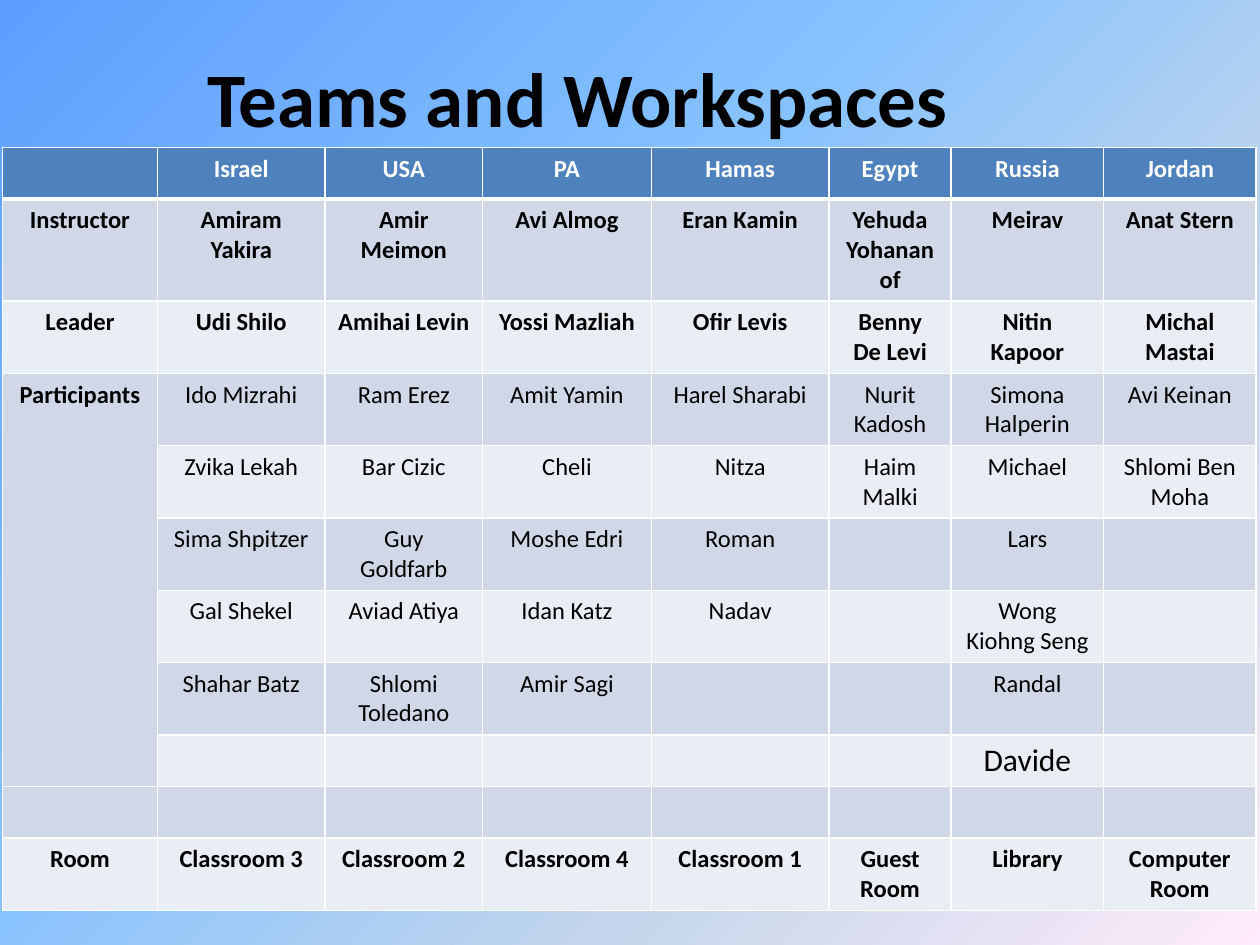
from dataclasses import dataclass

from lxml import etree
from pptx import Presentation, util as u
from pptx.dml.color import RGBColor
from pptx.enum import text
from pptx.oxml.ns import qn


@dataclass(frozen=True)
class Theme:
    """Colours, font and type sizes of the slide."""
    font: str = "Calibri"
    ink: str = "000000"
    white: str = "FFFFFF"
    header: str = "4F81BD"
    bands: tuple = ("D0D8E8", "E9EDF4")
    sky: tuple = ((0, "5E9EFF"), (40, "85C2FF"), (70, "C4D6EB"), (100, "FFEBFA"))
    title_size: int = 44
    cell_size: int = 14
    large_size: int = 18
    rule: int = 1
    header_rule: int = 3


THEME = Theme()
TITLE = "Teams and Workspaces "
SCHEDULE = [
    ["", "Israel", "USA", "PA", "Hamas", "Egypt", "Russia", "Jordan"],
    ["Instructor", "Amiram Yakira", "Amir Meimon", "Avi Almog", "Eran Kamin",
     "Yehuda Yohananof", "Meirav", "Anat Stern"],
    ["Leader", "Udi Shilo", "Amihai Levin", "Yossi Mazliah", "Ofir Levis",
     "Benny De Levi", "Nitin Kapoor", "Michal Mastai"],
    ["Participants", "Ido Mizrahi", "Ram Erez", "Amit Yamin", "Harel Sharabi",
     "Nurit Kadosh", "Simona Halperin", "Avi Keinan"],
    ["", "Zvika Lekah", "Bar Cizic", "Cheli", "Nitza", "Haim Malki", "Michael",
     "Shlomi Ben Moha"],
    ["", "Sima Shpitzer", "Guy Goldfarb", "Moshe Edri", "Roman", "", "Lars", ""],
    ["", "Gal Shekel", "Aviad Atiya", "Idan Katz", "Nadav", "", "Wong Kiohng Seng", ""],
    ["", "Shahar Batz", "Shlomi Toledano", "Amir Sagi", "", "", "Randal", ""],
    ["", "", "", "", "", "", "Davide", ""],
    [""] * 8,
    ["Room", "Classroom 3", "Classroom 2", "Classroom 4", "Classroom 1",
     "Guest Room", "Library", "Computer Room"],
]
COLUMNS = [1.23, 1.33, 1.25, 1.34, 1.41, 0.97, 1.21, 1.21]
ROW_HEIGHT = 0.41
PARTICIPANT_ROWS = range(3, 9)


def paint_background(slide):
    """Fill the slide with the diagonal sky gradient."""
    fill = slide.background.fill
    fill.gradient()
    gradient = slide.background._cSld.find(".//" + qn("a:gradFill"))
    stops = gradient.find(qn("a:gsLst"))
    for stop in list(stops):
        stops.remove(stop)
    for share, colour in THEME.sky:
        stop = etree.SubElement(stops, qn("a:gs"), pos=str(share * 1000))
        etree.SubElement(stop, qn("a:srgbClr"), val=colour)
    gradient.find(qn("a:lin")).set("ang", str(45 * 60000))


def write(frame, words, size, colour, bold):
    """Set one centred right-to-left paragraph in a text frame."""
    frame.text = words
    paragraph = frame.paragraphs[0]
    paragraph.alignment = text.PP_ALIGN.CENTER
    paragraph._p.get_or_add_pPr().set("rtl", "1")
    for run in paragraph.runs:
        run.font.name = THEME.font
        run.font.size = u.Pt(size)
        run.font.bold = bold
        run.font.color.rgb = RGBColor.from_string(colour)


def place_title(slide, box):
    """Place the heading in the title placeholder."""
    title = slide.shapes.title
    title.left, title.top, title.width, title.height = map(u.Inches, box)
    title.text_frame.vertical_anchor = text.MSO_ANCHOR.MIDDLE
    write(title.text_frame, TITLE, THEME.title_size, THEME.ink, True)


def rule_cell(cell, row):
    """Draw the white borders, heavier beneath the header row."""
    heavy = {(0, "B"), (1, "T")}
    for side in "LRTB":
        width = THEME.header_rule if (row, side) in heavy else THEME.rule
        line = etree.SubElement(cell._tc.get_or_add_tcPr(), qn("a:ln" + side),
                                w=str(u.Pt(width)))
        solid = etree.SubElement(line, qn("a:solidFill"))
        etree.SubElement(solid, qn("a:srgbClr"), val=THEME.white)


def place_schedule(slide, left, top):
    """Place the banded table of teams, people and rooms."""
    table = slide.shapes.add_table(
        len(SCHEDULE), len(COLUMNS), u.Inches(left), u.Inches(top),
        u.Inches(sum(COLUMNS)), u.Inches(ROW_HEIGHT * len(SCHEDULE))).table
    for column, width in zip(table.columns, COLUMNS):
        column.width = u.Inches(width)
    for row, names in enumerate(SCHEDULE):
        table.rows[row].height = u.Inches(ROW_HEIGHT)
        band = THEME.bands[(row - 1) % 2] if row else THEME.header
        for column, name in enumerate(names):
            cell = table.cell(row, column)
            rule_cell(cell, row)
            cell.fill.solid()
            cell.fill.fore_color.rgb = RGBColor.from_string(band)
            if name:
                size = THEME.large_size if name == "Davide" else THEME.cell_size
                write(cell.text_frame, name, size,
                      THEME.ink if row else THEME.white,
                      column == 0 or row not in PARTICIPANT_ROWS)
    table.cell(PARTICIPANT_ROWS[0], 0).merge(table.cell(PARTICIPANT_ROWS[-1], 0))


def main():
    """Build and save the slide."""
    deck = Presentation()
    deck.slide_width, deck.slide_height = u.Inches(10), u.Inches(7.5)
    slide = deck.slides.add_slide(deck.slide_layouts[5])
    paint_background(slide)
    place_title(slide, (0, 0.14, 9, 1.25))
    place_schedule(slide, 0.02, 1.17)
    deck.save("out.pptx")


if __name__ == "__main__":
    main()
